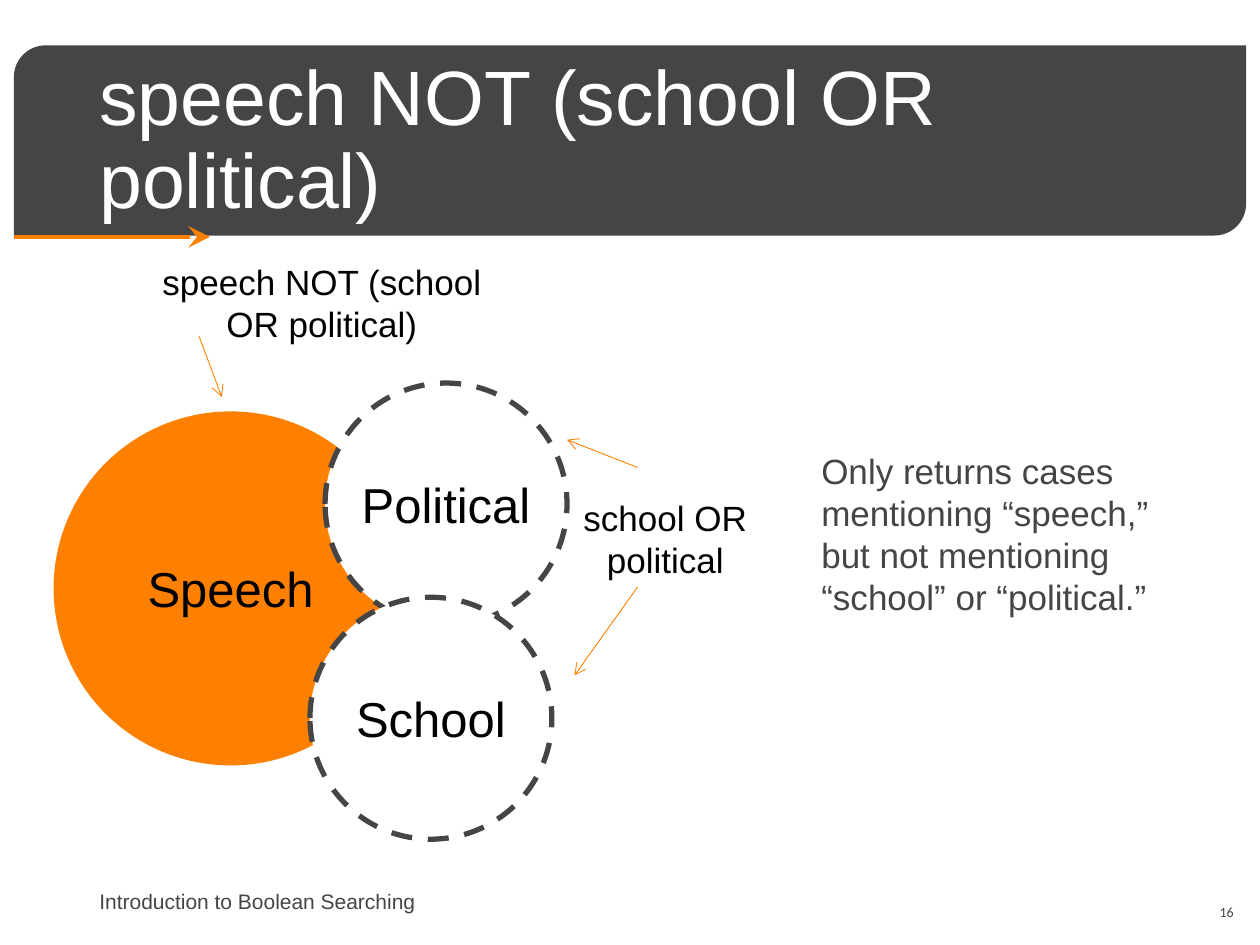
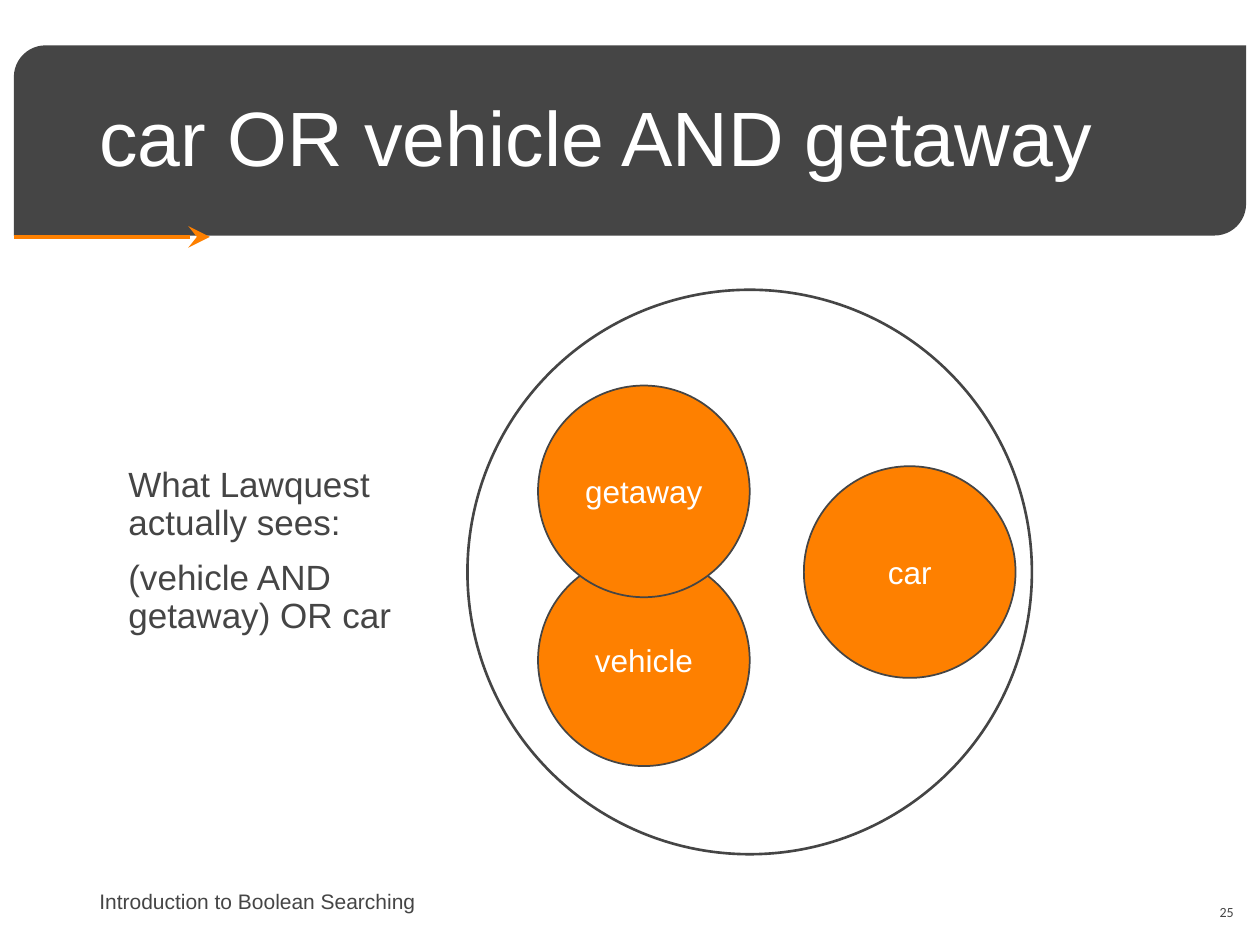
"""Build two slides that explain Boolean searching with circle diagrams."""
import dataclasses

import lxml.etree
import pptx
import pptx.dml.color
import pptx.enum.dml
import pptx.enum.shapes
import pptx.enum.text
import pptx.oxml.ns
import pptx.util


@dataclasses.dataclass(frozen=True)
class Theme:
    dark: str = "454545"
    accent: str = "FE8000"
    white: str = "FFFFFF"
    black: str = "000000"
    font: str = "Arial"
    page_font: str = "Calibri"
    title: int = 44
    label: int = 28
    body: int = 20
    small: int = 18
    foot: int = 12
    page: int = 8


T = Theme()
WIDE, HIGH = 10, 7.5
EDGE, BAND_TOP, BAND_HIGH = 0.11, 0.36, 1.51
INDENT = 0.69
FOOTER = "Introduction to Boolean Searching"

SOLID = {"fill": T.accent, "size": T.label, "color": T.black}
DASHED = {"fill": T.white, "edge": 3, "dash": True, "size": T.label, "color": T.black}
TERM = {"fill": T.accent, "edge": 1, "size": T.small, "color": T.white}
RING = {"edge": 1.5}
NOTE = {"color": T.dark}
CALL = {"color": T.black, "align": "CENTER"}
TIGHT = {"color": T.dark, "spacing": 0.9, "before": 10}

SLIDES = [
    {
        "title": "speech NOT (school OR political)",
        "title_wide": 9.15,
        "page": "16",
        "circles": [
            ("Speech", 1.83, 4.67, 2.81, SOLID),
            ("Political", 3.54, 4, 1.92, DASHED),
            ("School", 3.42, 5.7, 1.92, DASHED),
        ],
        "texts": [
            (["Only returns cases mentioning “speech,” but not mentioning “school” or “political.”"],
             (6.42, 3.52, 3.03, 1.45), NOTE),
            (["speech NOT (school OR political)"], (1.05, 2.02, 3.01, 0.77), CALL),
            (["school OR political"], (4.42, 3.89, 1.72, 0.77), CALL),
        ],
        "arrows": [
            (1.58, 2.67, 1.76, 3.15),
            (5.06, 3.71, 4.5, 3.49),
            (5.06, 4.66, 4.56, 5.36),
        ],
    },
    {
        "title": "car OR vehicle AND getaway",
        "title_wide": 8.62,
        "page": "25",
        "circles": [
            ("car", 7.22, 4.54, 1.68, TERM),
            ("vehicle", 5.11, 5.24, 1.68, TERM),
            ("getaway", 5.11, 3.9, 1.68, TERM),
            ("", 5.95, 4.54, 4.48, RING),
        ],
        "texts": [
            (["What Lawquest actually sees:", "(vehicle AND getaway) OR car"],
             (0.92, 3.66, 2.92, 1.48), TIGHT),
        ],
        "arrows": [],
    },
]


def inches(*sizes):
    return [pptx.util.Inches(size) for size in sizes]


def rgb(code):
    return pptx.dml.color.RGBColor.from_string(code)


def style(para, size, color, align="LEFT", font=T.font):
    para.alignment = getattr(pptx.enum.text.PP_ALIGN, align)
    para.font.size = pptx.util.Pt(size)
    para.font.name = font
    para.font.color.rgb = rgb(color)


def add_text(slide, lines, place, color, size=T.body, align="LEFT",
             anchor="TOP", spacing=None, before=0, font=T.font):
    frame = slide.shapes.add_textbox(*inches(*place)).text_frame
    frame.word_wrap = True
    frame.vertical_anchor = getattr(pptx.enum.text.MSO_ANCHOR, anchor)
    for index, line in enumerate(lines):
        para = frame.add_paragraph() if index else frame.paragraphs[0]
        para.text = line
        style(para, size, color, align, font)
        if spacing:
            para.line_spacing = spacing
        if index and before:
            para.space_before = pptx.util.Pt(before)


def add_shape(slide, kind, place, fill=None, edge=None, dash=False):
    shape = slide.shapes.add_shape(
        getattr(pptx.enum.shapes.MSO_SHAPE, kind), *inches(*place))
    shape.shadow.inherit = False
    if fill:
        shape.fill.solid()
        shape.fill.fore_color.rgb = rgb(fill)
    else:
        shape.fill.background()
    if edge:
        shape.line.color.rgb = rgb(T.dark)
        shape.line.width = pptx.util.Pt(edge)
        if dash:
            shape.line.dash_style = pptx.enum.dml.MSO_LINE.DASH
    else:
        shape.line.fill.background()
    return shape


def add_circle(slide, label, mid_x, mid_y, across, look):
    outline = {key: look[key] for key in ("fill", "edge", "dash") if key in look}
    place = (mid_x - across / 2, mid_y - across / 2, across, across)
    shape = add_shape(slide, "OVAL", place, **outline)
    if label:
        frame = shape.text_frame
        frame.word_wrap = False
        frame.vertical_anchor = pptx.enum.text.MSO_ANCHOR.MIDDLE
        frame.paragraphs[0].text = label
        style(frame.paragraphs[0], look["size"], look["color"], "CENTER")


def add_arrow(slide, ends, width=0.5, head="arrow", scale="med"):
    line = slide.shapes.add_connector(
        pptx.enum.shapes.MSO_CONNECTOR.STRAIGHT, *inches(*ends))
    line.line.color.rgb = rgb(T.accent)
    line.line.width = pptx.util.Pt(width)
    name = pptx.oxml.ns.qn
    lxml.etree.SubElement(line.line._get_or_add_ln(), name("a:tailEnd"),
                          type=head, w=scale, len=scale)
    lxml.etree.SubElement(line._element.spPr, name("a:effectLst"))


def add_frame(slide, title, title_wide, page):
    base = BAND_TOP + BAND_HIGH
    add_shape(slide, "ROUND_2_DIAG_RECTANGLE",
              (EDGE, BAND_TOP, WIDE - 2 * EDGE, BAND_HIGH), fill=T.dark)
    add_arrow(slide, (EDGE, base + 0.01, WIDE / 6, base + 0.01), 2.5, "stealth", "lg")
    add_text(slide, [title], (INDENT, 0.4, title_wide, 1.45), T.white,
             T.title, anchor="MIDDLE", spacing=0.9)
    add_text(slide, [page], (WIDE - EDGE - 2.25, 7.04, 2.25, 0.4), T.dark,
             T.page, "RIGHT", "MIDDLE", font=T.page_font)
    add_text(slide, [FOOTER], (INDENT, 6.95, 3.31, 0.4), T.dark,
             T.foot, anchor="MIDDLE")


def main():
    deck = pptx.Presentation()
    deck.slide_width, deck.slide_height = inches(WIDE, HIGH)
    for item in SLIDES:
        slide = deck.slides.add_slide(deck.slide_layouts[6])
        add_frame(slide, item["title"], item["title_wide"], item["page"])
        for circle in item["circles"]:
            add_circle(slide, *circle)
        for lines, place, look in item["texts"]:
            add_text(slide, lines, place, **look)
        for ends in item["arrows"]:
            add_arrow(slide, ends)
    deck.save("out.pptx")


if __name__ == "__main__":
    main()
